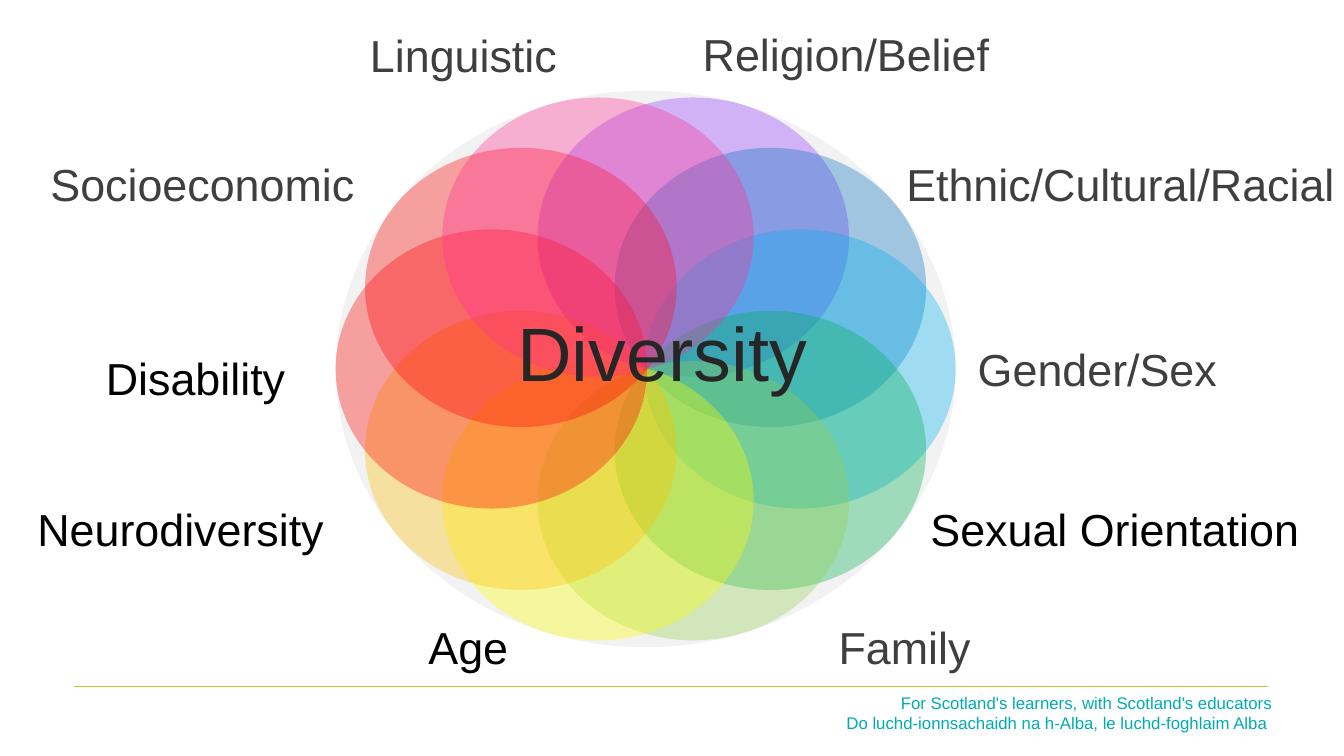
from math import cos, radians, sin

from lxml import etree
from pptx import Presentation
from pptx.dml.color import RGBColor
from pptx.enum.shapes import MSO_CONNECTOR, MSO_SHAPE
from pptx.enum.text import MSO_ANCHOR, PP_ALIGN
from pptx.oxml.ns import qn
from pptx.util import Inches, Pt

ELLIPSE = MSO_SHAPE.OVAL
STRAIGHT = MSO_CONNECTOR.STRAIGHT
MIDDLE = MSO_ANCHOR.MIDDLE
TOP = MSO_ANCHOR.TOP
LEFT, RIGHT = PP_ALIGN.LEFT, PP_ALIGN.RIGHT
TITLE_ONLY = 5

BLACK, GREY = "000000", "3F3F3F"

# All places and sizes are percentages of the slide's width and height.
WHEEL_CENTRE = (48.04, 48.8)
WHEEL_SIZE = (46.13, 73.6)
PETAL_SIZE = (23.18, 36.93)
PETAL_COLOURS = ["9437FF", "0070C0", "00B0F0", "00B050", "92D050",
                 "FFFF00", "FFC000", "FF0000", "FF0000", "FF2F92"]
LABEL_HEIGHT = 7.2
LABELS = [  # wording, left, top, width, colour
    ("Disability", 7.88, 46.4, 22.43, BLACK),
    ("Socioeconomic", 3.75, 20.67, 23.1, GREY),
    ("Linguistic", 27.53, 3.73, 17.93, GREY),
    ("Religion/Belief", 52.28, 3.6, 23.78, GREY),
    ("Gender/Sex", 72.75, 45.2, 22.43, GREY),
    ("Ethnic/Cultural/Racial", 67.43, 20.67, 32.55, GREY),
    ("Sexual Orientation", 69.23, 66.4, 30.77, BLACK),
    ("Family", 62.4, 82, 12.15, GREY),
    ("Age", 31.88, 82, 8.1, BLACK),
    ("Neurodiversity", 2.78, 66.4, 26.63, BLACK),
]
MOTTO = ["For Scotland's learners, with Scotland's educators",
         "Do luchd-ionnsachaidh na h-Alba, le luchd-foghlaim Alba "]


def rgb(colour):
    return RGBColor.from_string(colour)


def write(frame, lines, *, size, colour, font="Arial", align=LEFT,
          anchor=TOP, inset=(0, 0)):
    """Fill a text frame; inset is horizontal and vertical, in inches."""
    frame.word_wrap = True
    frame.vertical_anchor = anchor
    frame.margin_left = frame.margin_right = Inches(inset[0])
    frame.margin_top = frame.margin_bottom = Inches(inset[1])
    frame.text = "\n".join(lines)
    for paragraph in frame.paragraphs:
        paragraph.alignment = align
        paragraph.line_spacing = 1.0
        paragraph.font.size = Pt(size)
        paragraph.font.name = font
        paragraph.font.color.rgb = rgb(colour)


class Board:
    def __init__(self, deck):
        self.width, self.height = deck.slide_width, deck.slide_height
        self.slide = deck.slides.add_slide(deck.slide_layouts[TITLE_ONLY])

    def place(self, x, y):
        """Turn percentages of the slide into lengths."""
        return round(self.width * x / 100), round(self.height * y / 100)

    def title(self, wording, left, top, width, height):
        heading = self.slide.shapes.title
        heading.left, heading.top = self.place(left, top)
        heading.width, heading.height = self.place(width, height)
        write(heading.text_frame, [wording], size=54, colour="262626",
              anchor=MIDDLE, inset=(0.1, 0.05))
        # The heading lies in front of the wheel.
        heading.element.getparent().append(heading.element)

    def text(self, lines, left, top, width, height, **style):
        box = self.slide.shapes.add_textbox(*self.place(left, top),
                                            *self.place(width, height))
        write(box.text_frame, lines, **style)

    def rule(self, left, right, y, colour):
        line = self.slide.shapes.add_connector(
            STRAIGHT, *self.place(left, y), *self.place(right, y))
        line.line.color.rgb = rgb(colour)
        line.line.width = Pt(0.75)
        etree.SubElement(line.element.spPr, qn("a:effectLst"))

    def disc(self, group, centre, size, colour, opacity=100):
        corner = [c - s / 2 for c, s in zip(centre, size)]
        disc = group.shapes.add_shape(ELLIPSE, *self.place(*corner),
                                      *self.place(*size))
        disc.shadow.inherit = False
        disc.line.fill.background()
        disc.fill.solid()
        disc.fill.fore_color.rgb = rgb(colour)
        if opacity < 100:
            tint = disc.element.spPr.find(".//" + qn("a:srgbClr"))
            etree.SubElement(tint, qn("a:alpha"), val=str(opacity * 1000))

    def wheel(self):
        """Petals at equal angles, each touching the rim of the backdrop."""
        group = self.slide.shapes.add_group_shape()
        self.disc(group, WHEEL_CENTRE, WHEEL_SIZE, "F2F2F2")
        orbit_x, orbit_y = [(w - p) / 2 for w, p in zip(WHEEL_SIZE, PETAL_SIZE)]
        step = 360 / len(PETAL_COLOURS)
        for index, colour in enumerate(PETAL_COLOURS):
            angle = radians(step * (index + 0.5))
            centre = (WHEEL_CENTRE[0] + orbit_x * sin(angle),
                      WHEEL_CENTRE[1] - orbit_y * cos(angle))
            self.disc(group, centre, PETAL_SIZE, colour, opacity=34)


def main():
    deck = Presentation()
    deck.slide_width, deck.slide_height = Inches(13.33), Inches(7.5)
    board = Board(deck)
    board.rule(5.48, 94.35, 90.8, "B3D236")
    board.text(MOTTO, 61.73, 90.93, 33.68, 6.67, size=12, colour="00ABB5",
               align=RIGHT, inset=(0.1, 0.05))
    board.wheel()
    for wording, left, top, width, colour in LABELS:
        board.text([wording], left, top, width, LABEL_HEIGHT,
                   size=32, colour=colour)
    board.title("Diversity", 37.73, 39.73, 24.75, 13.47)
    deck.save("out.pptx")


if __name__ == "__main__":
    main()
